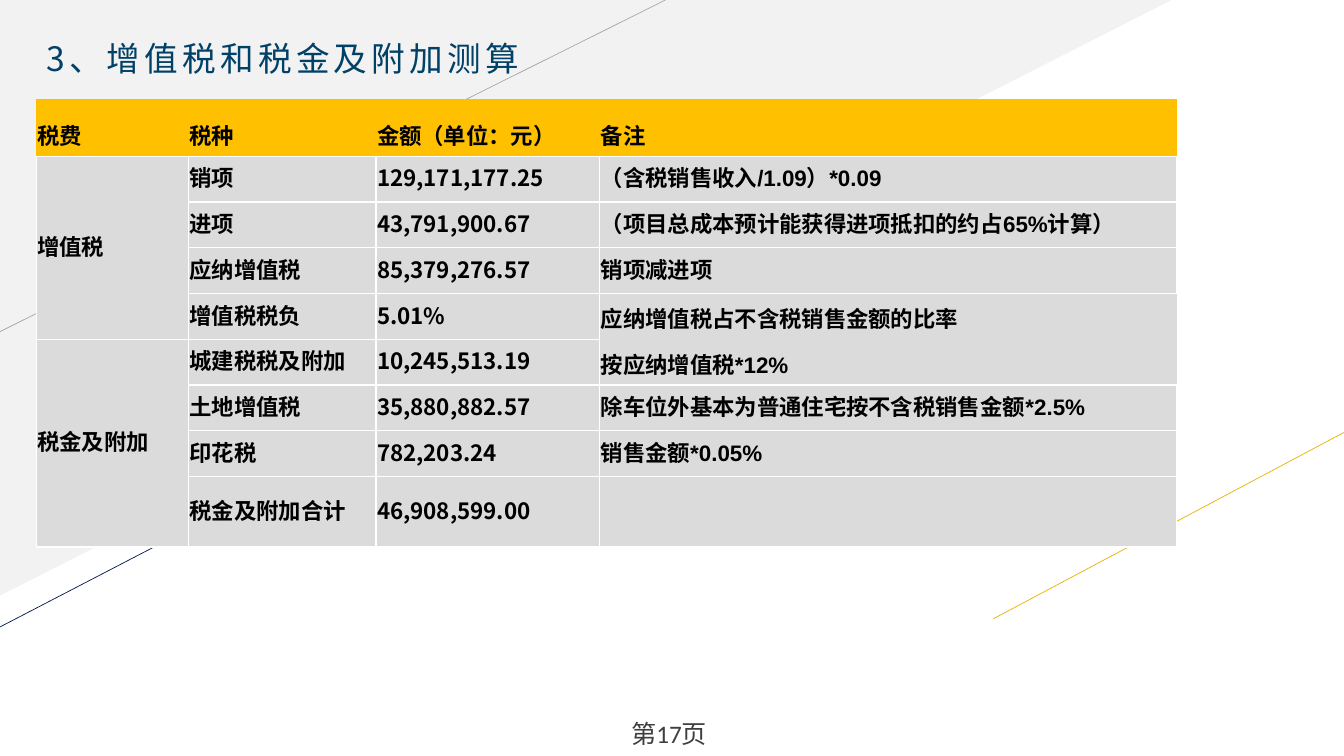
from lxml import etree
from pptx import Presentation
from pptx import util as u
from pptx.dml.color import RGBColor
from pptx.enum import shapes, text
from pptx.oxml import ns

PX = 9144
CJK = "Noto Sans CJK SC"
COLORS = {
    "wedge": "F2F2F2", "grey": "A6A6A6", "gold": "EAB200", "navy": "00194C",
    "title": "014067", "head": "FFC000", "cell": "DBDBDB", "border": "FFFFFF",
    "ink": "000000", "footer": "3F3F3F",
}
LINES = [
    ("grey", 0, 329, 660, 0),
    ("gold", 985, 614, 1333, 429),
    ("navy", -2, 623, 208, 514),
]
ROWS = [
    ("税费", "税种", "金额（单位：元）", "备注"),
    ("增值税", "销项", "129,171,177.25", "（含税销售收入/1.09）*0.09"),
    ("", "进项", "43,791,900.67", "（项目总成本预计能获得进项抵扣的约占65%计算）"),
    ("", "应纳增值税", "85,379,276.57", "销项减进项"),
    ("", "增值税税负", "5.01%", "应纳增值税占不含税销售金额的比率"),
    ("税金及附加", "城建税税及附加", "10,245,513.19", "按应纳增值税*12%"),
    ("", "土地增值税", "35,880,882.57", "除车位外基本为普通住宅按不含税销售金额*2.5%"),
    ("", "印花税", "782,203.24", "销售金额*0.05%"),
    ("", "税金及附加合计", "46,908,599.00", ""),
]
COLUMN_WIDTHS = (151, 186, 222, 572)
HEAD_HEIGHT, TOTAL_HEIGHT = 57, 70
OPEN_SIDES = {(4, 3): "RB", (5, 3): "RT"}


def px(length):
    """Turn px into EMU."""
    return u.Emu(round(length * PX))


def rgb(name):
    """Look up a named colour."""
    return RGBColor.from_string(COLORS[name])


def set_all(target, values):
    """Set each attribute of the target from a dict."""
    for name, value in values.items():
        setattr(target, name, value)


def place(item, box):
    """Move an item to a box given in px."""
    set_all(item, dict(zip(("left", "top", "width", "height"), map(px, box))))


def write(para, words, color, font, **values):
    """Add a formatted span to a paragraph, with a matching East Asian font."""
    span = para.add_run()
    span.text = words
    set_all(span.font, {"name": font, **values})
    span.font.color.rgb = rgb(color)
    etree.SubElement(span.font._element, ns.qn("a:ea"), typeface=CJK)
    return span


def draw_backdrop(page, box):
    """Draw the pale corner wedge and the slanted lines."""
    left, top, width, height = box
    wedge = page.shapes.add_shape(
        shapes.MSO_SHAPE.RIGHT_TRIANGLE, *map(px, (left, top, width, height)))
    wedge.element.spPr.xfrm.set("flipV", "1")
    wedge.shadow.inherit = False
    wedge.fill.solid()
    wedge.fill.fore_color.rgb = rgb("wedge")
    wedge.line.fill.background()
    for color, x1, y1, x2, y2 in LINES:
        ends = (left + x1, top + y1, left + x2, top + y2)
        line = page.shapes.add_connector(
            shapes.MSO_CONNECTOR.STRAIGHT, *map(px, ends))
        line.line.width = u.Pt(0.5)
        line.line.color.rgb = rgb(color)
        etree.SubElement(line.element.spPr, ns.qn("a:effectLst"))


def draw_title(page, box):
    """Fill the title placeholder and bring it in front of the backdrop."""
    title = page.shapes.title
    place(title, box)
    title.element.getparent().append(title.element)
    set_all(title.text_frame, {
        "word_wrap": True, "auto_size": text.MSO_AUTO_SIZE.NONE,
        "vertical_anchor": text.MSO_ANCHOR.MIDDLE})
    para = title.text_frame.paragraphs[0]
    set_all(para, {"alignment": text.PP_ALIGN.LEFT, "line_spacing": 0.9,
                   "space_before": u.Pt(10)})
    span = write(para, "3、增值税和税金及附加测算", "title", CJK, size=u.Pt(24))
    span.font._element.set("spc", "300")


def set_borders(cell, open_sides):
    """Give a cell white borders, except on its open sides."""
    properties = cell._tc.get_or_add_tcPr()
    for position, side in enumerate("LRTB"):
        border = etree.Element(ns.qn(f"a:ln{side}"), w=str(u.Pt(1)))
        if side in open_sides:
            etree.SubElement(border, ns.qn("a:noFill"))
        else:
            fill = etree.SubElement(border, ns.qn("a:solidFill"))
            etree.SubElement(fill, ns.qn("a:srgbClr"), val=COLORS["border"])
        properties.insert(position, border)


def format_cell(cell, words, row, column):
    """Write and style one table cell."""
    low = row == 0 or (row, column) in OPEN_SIDES
    set_all(cell, {
        "margin_left": px(1), "margin_right": px(1), "margin_top": px(1),
        "margin_bottom": px(5),
        "vertical_anchor": text.MSO_ANCHOR.BOTTOM if low else text.MSO_ANCHOR.MIDDLE})
    cell.fill.solid()
    cell.fill.fore_color.rgb = rgb("cell" if row else "head")
    set_borders(cell, OPEN_SIDES.get((row, column), "" if row else "LRT"))
    if words:
        font = CJK if row and column == 2 else "Arial"
        write(cell.text_frame.paragraphs[0], words, "ink", font,
              size=u.Pt(16), bold=True)


def draw_tax_table(page, box):
    """Build the tax table, with equal rows between its head and total."""
    table = page.shapes.add_table(
        len(ROWS), len(COLUMN_WIDTHS), *map(px, box)).table
    set_all(table, {"first_row": False, "horz_banding": False})
    for column, width in zip(table.columns, COLUMN_WIDTHS):
        column.width = px(width)
    middle = (box[3] - HEAD_HEIGHT - TOTAL_HEIGHT) / (len(ROWS) - 2)
    heights = [HEAD_HEIGHT] + [middle] * (len(ROWS) - 2) + [TOTAL_HEIGHT]
    for row, height in zip(table.rows, heights):
        row.height = px(height)
    for row, entries in enumerate(ROWS):
        for column, words in enumerate(entries):
            format_cell(table.cell(row, column), words, row, column)
    for first in (1, 5):
        table.cell(first, 0).merge(table.cell(first + 3, 0))


def draw_footer(page, box):
    """Write the page number, indented within its box."""
    frame = page.shapes.add_textbox(*map(px, box)).text_frame
    set_all(frame, {"word_wrap": True, "margin_left": px(111)})
    write(frame.paragraphs[0], "第17页", "footer", "Calibri", size=u.Pt(18))


def main():
    """Build and save the deck."""
    deck = Presentation()
    set_all(deck, {"slide_width": px(1333), "slide_height": px(750)})
    page = deck.slides.add_slide(deck.slide_layouts[5])
    draw_backdrop(page, (0, 0, 1162, 591))
    draw_title(page, (36, 38, 615, 44))
    draw_tax_table(page, (36, 98, 1131, 445))
    draw_footer(page, (515, 708, 278, 40))
    deck.save("out.pptx")


if __name__ == "__main__":
    main()
